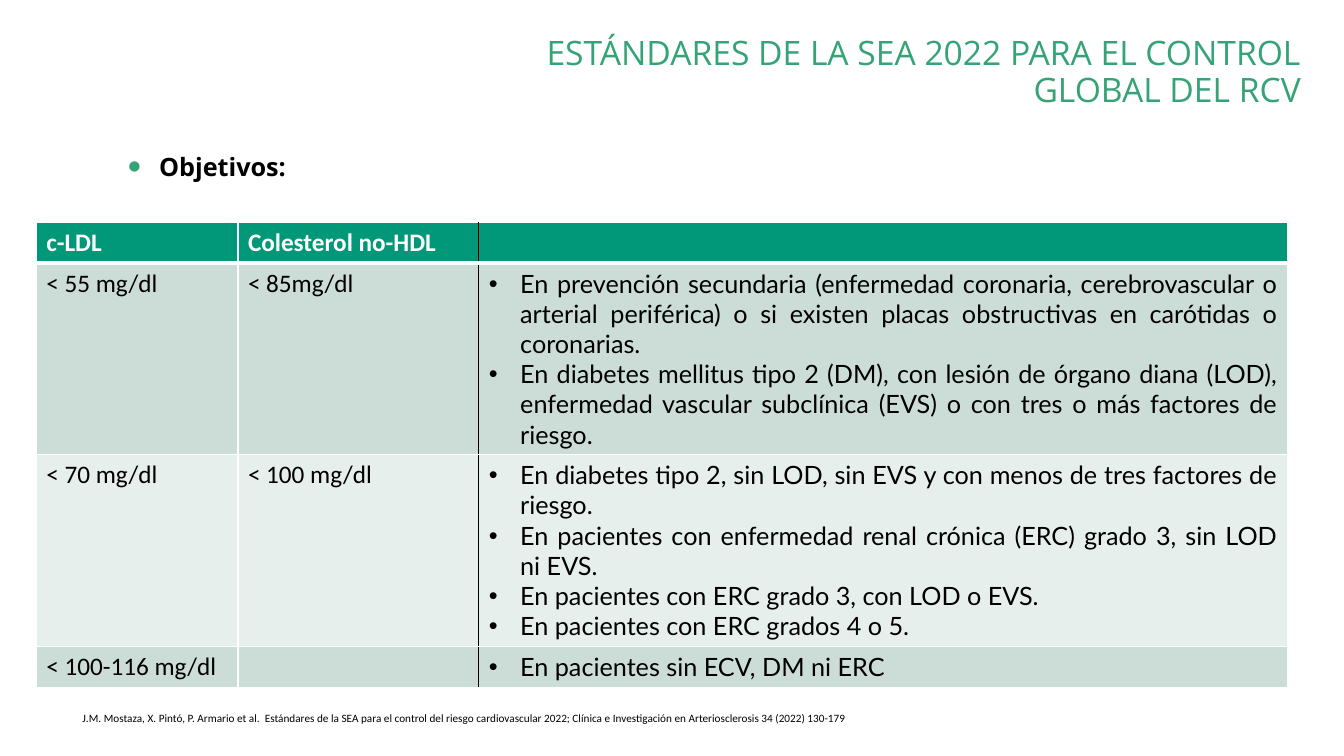
"""Builds the slide with the SEA 2022 lipid targets table."""
from lxml import etree
from pptx import Presentation
from pptx.dml.color import RGBColor
from pptx.enum.text import MSO_ANCHOR as ANCHOR, PP_ALIGN as ALIGN
from pptx.oxml.ns import qn
from pptx.util import Inches, Pt

GREEN, HEADER, BLACK, WHITE = "34A376", "009879", "000000", "FFFFFF"
DARK_BAND, LIGHT_BAND = "CCDDD7", "E7EFEC"


def add_run(p, text, size, font, color, bold=False):
    r = p.add_run()
    r.text = text
    r.font.size, r.font.name, r.font.bold = Pt(size), font, bold
    r.font.color.rgb = RGBColor.from_string(color)


def add_bullet(p, color=BLACK, percent=100):
    pPr = p._p.get_or_add_pPr()
    pPr.set("marL", str(Inches(0.31)))
    pPr.set("indent", str(-Inches(0.31)))
    clr = etree.SubElement(pPr, qn("a:buClr"))
    etree.SubElement(clr, qn("a:srgbClr"), val=color)
    etree.SubElement(pPr, qn("a:buSzPct"), val=str(percent * 1000))
    etree.SubElement(pPr, qn("a:buFont"), typeface="Arial")
    etree.SubElement(pPr, qn("a:buChar"), char="•")


prs = Presentation()
prs.slide_width, prs.slide_height = Inches(13.33), Inches(7.5)
s = prs.slides.add_slide(prs.slide_layouts[6])

boxes = [
    ((4.43, 0.25, 8.57, 0.95), ANCHOR.MIDDLE),
    ((1.17, -1.04, 11.68, 5.26), ANCHOR.MIDDLE),
    ((0.72, 7.01, 10.34, 0.24), ANCHOR.TOP),
]
paragraphs = []
for place, anchor in boxes:
    tf = s.shapes.add_textbox(*map(Inches, place)).text_frame
    tf.word_wrap = True
    tf.vertical_anchor = anchor
    paragraphs.append(tf.paragraphs[0])
title, heading, citation = paragraphs

title.alignment = ALIGN.RIGHT
title.line_spacing = 0.9
add_run(title, "ESTÁNDARES DE LA SEA 2022 PARA EL CONTROL GLOBAL DEL RCV",
        24, "Open Sans", GREEN)

heading.line_spacing = 1.4
heading.space_after = Pt(12)
add_bullet(heading, GREEN, 150)
add_run(heading, "Objetivos:", 18, "Open Sans", BLACK, True)

add_run(citation, "J.M. Mostaza, X. Pintó, P. Armario et al.  Estándares de la SEA para el "
        "control del riesgo cardiovascular 2022; Clínica e Investigación en "
        "Arteriosclerosis 34 (2022) 130-179", 8, "Calibri", BLACK)

rows = [
    (0.4, HEADER, "c-LDL", "Colesterol no-HDL", []),
    (1.9, DARK_BAND, "< 55 mg/dl", "< 85mg/dl", [
        "En prevención secundaria (enfermedad coronaria, cerebrovascular o arterial "
        "periférica) o si existen placas obstructivas en carótidas o coronarias.",
        "En diabetes mellitus tipo 2 (DM), con lesión de órgano diana (LOD), enfermedad "
        "vascular subclínica (EVS) o con tres o más factores de riesgo."]),
    (1.9, LIGHT_BAND, "< 70 mg/dl", "< 100 mg/dl", [
        "En diabetes tipo 2, sin LOD, sin EVS y con menos de tres factores de riesgo.",
        "En pacientes con enfermedad renal crónica (ERC) grado 3, sin LOD ni EVS.",
        "En pacientes con ERC grado 3, con LOD o EVS.",
        "En pacientes con ERC grados 4 o 5."]),
    (0.41, DARK_BAND, "< 100-116 mg/dl", "", ["En pacientes sin ECV, DM ni ERC"]),
]
table = s.shapes.add_table(len(rows), 3, Inches(0.36), Inches(2.21),
                           Inches(12.41), Inches(4.61)).table
for col, width in zip(table.columns, (2, 2.39, 8.02)):
    col.width = Inches(width)

for i, (height, fill, ldl, non_hdl, patients) in enumerate(rows):
    table.rows[i].height = Inches(height)
    for j, lines in enumerate(([ldl], [non_hdl], patients)):
        cell = table.cell(i, j)
        borders = {
            "L": (BLACK if j == 2 else WHITE, 1),
            "R": (BLACK if j == 1 else WHITE, 1),
            "T": (WHITE, 3 if i == 1 else 1),
            "B": (WHITE, 3 if i == 0 else 1),
        }
        tcPr = cell._tc.get_or_add_tcPr()
        for side, (color, width) in borders.items():
            ln = etree.SubElement(tcPr, qn(f"a:ln{side}"), w=str(Pt(width)))
            solid = etree.SubElement(ln, qn("a:solidFill"))
            etree.SubElement(solid, qn("a:srgbClr"), val=color)
        cell.fill.solid()
        cell.fill.fore_color.rgb = RGBColor.from_string(fill)
        tf = cell.text_frame
        for k, line in enumerate(filter(None, lines)):
            p = tf.add_paragraph() if k else tf.paragraphs[0]
            p.alignment = ALIGN.JUSTIFY
            if j == 2:
                add_bullet(p)
            add_run(p, line, 18, "Lato" if j == 2 else "Calibri",
                    BLACK if i else WHITE, i == 0)

prs.save("out.pptx")
